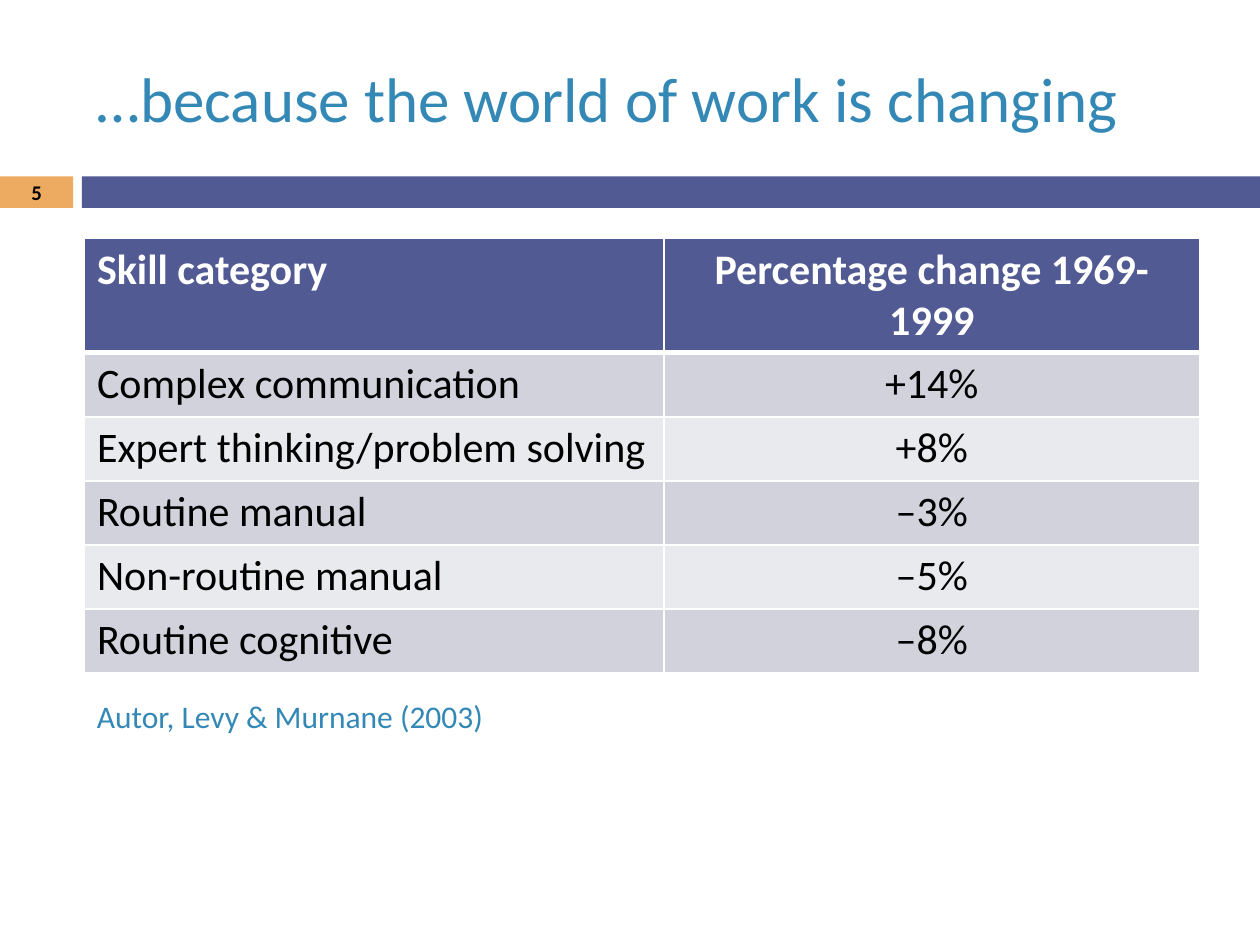
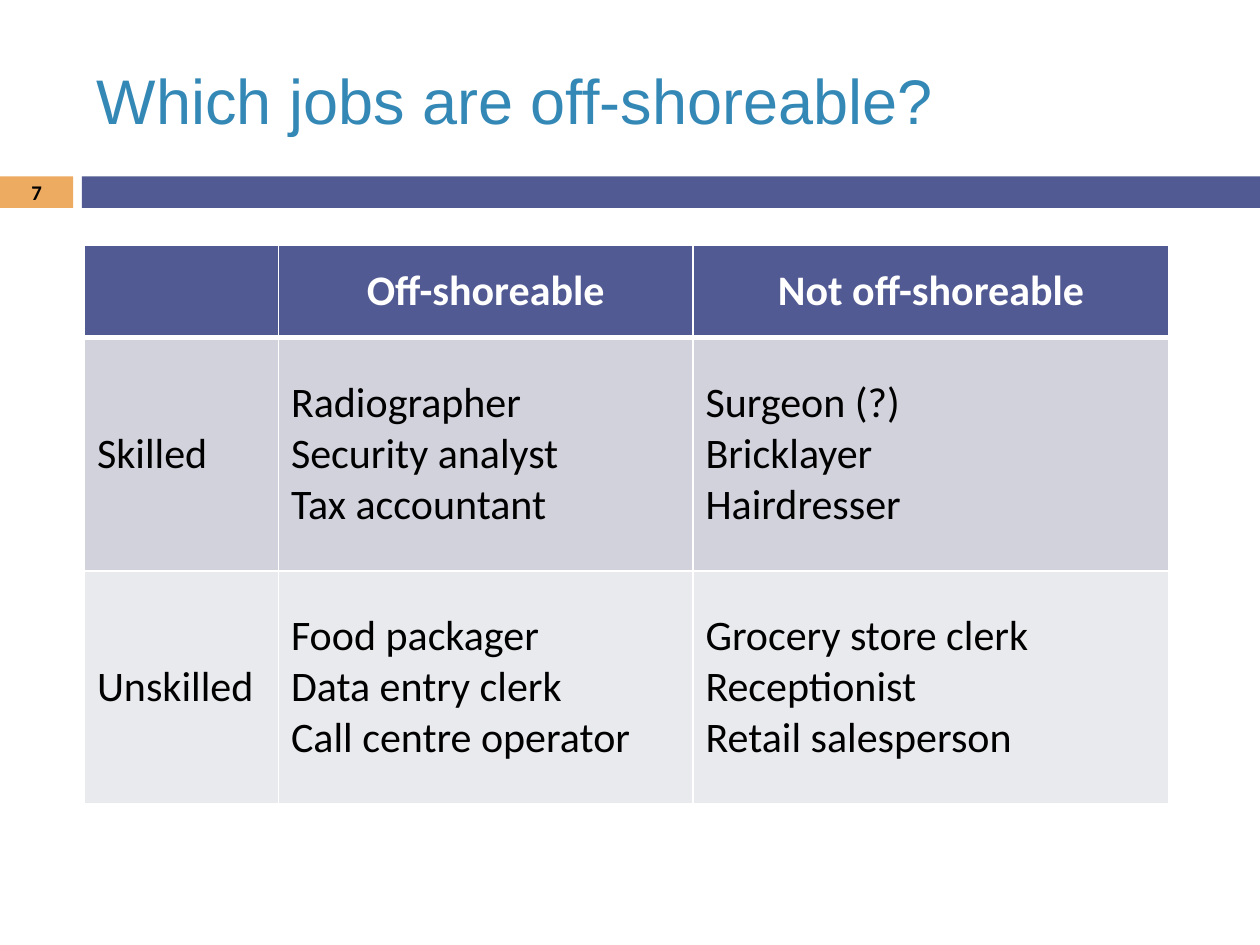
from collections import namedtuple

from lxml import etree
from pptx import Presentation
from pptx import util as u
from pptx.dml.color import RGBColor
from pptx.enum import shapes, text
from pptx.oxml.ns import qn

COLUMNS, ROWS = 100, 75
UNIT = u.Inches(0.1)
INDIGO, ORANGE, BLUE = "525A93", "EDAA61", "3488B6"
WHITE, BLACK = "FFFFFF", "000000"
STRIPES = "D1D2DC", "E9EAEE"
LEFT, CENTER = text.PP_ALIGN.LEFT, text.PP_ALIGN.CENTER
TOP, MIDDLE = text.MSO_ANCHOR.TOP, text.MSO_ANCHOR.MIDDLE

Box = namedtuple("Box", "left top width height")


def inside(box, left, top, width, height):
    return Box(box.left + left, box.top + top, width, height)


def lengths(box):
    return [int(value * UNIT) for value in box]


def color(value):
    return RGBColor.from_string(value)


def style(frame, size, ink, font="Calibri", bold=False, align=LEFT):
    for para in frame.paragraphs:
        para.alignment = align
        for span in para.runs:
            span.font.name = font
            span.font.size = u.Pt(size)
            span.font.bold = bold
            span.font.color.rgb = color(ink)


def add_text(page, box, words, size, ink, anchor=MIDDLE, **look):
    frame = page.shapes.add_textbox(*lengths(box)).text_frame
    frame.word_wrap = True
    frame.vertical_anchor = anchor
    frame.text = words
    style(frame, size, ink, **look)


def add_band(page, box, fill):
    band = page.shapes.add_shape(shapes.MSO_SHAPE.RECTANGLE, *lengths(box))
    band.shadow.inherit = False
    band.fill.solid()
    band.fill.fore_color.rgb = color(fill)
    band.line.fill.background()


def add_heading(page, box, title, number, title_top, title_font):
    badge = inside(box, 0, 14, 5.8, 2.5)
    add_band(page, badge, ORANGE)
    add_band(page, inside(box, 6.5, 14, box.width - 6.5, 2.5), INDIGO)
    add_text(page, inside(box, 6.7, title_top, 89.2, 10.8), title, 36, BLUE,
             font=title_font)
    add_text(page, badge, number, 11.9, BLACK, bold=True, align=CENTER)


def set_borders(cell, top, bottom):
    properties = cell._tc.get_or_add_tcPr()
    for side, width in zip("LRTB", (1, 1, top, bottom)):
        line = etree.SubElement(properties, qn(f"a:ln{side}"), w=str(u.Pt(width)))
        fill = etree.SubElement(line, qn("a:solidFill"))
        etree.SubElement(fill, qn("a:srgbClr"), val=WHITE)


def add_grid(page, box, columns, rows, content, head_aligns, body_aligns, anchor):
    table = page.shapes.add_table(len(rows), len(columns), *lengths(box)).table
    for column, width in zip(table.columns, columns):
        column.width = int(width * UNIT)
    for index, (row, height, words) in enumerate(zip(table.rows, rows, content)):
        head = index == 0
        row.height = int(height * UNIT)
        aligns = head_aligns if head else body_aligns
        for cell, value, align in zip(row.cells, words, aligns):
            set_borders(cell, 3 if index == 1 else 1, 3 if head else 1)
            cell.fill.solid()
            cell.fill.fore_color.rgb = color(INDIGO if head else STRIPES[(index - 1) % 2])
            cell.vertical_anchor = anchor
            cell.text = value
            style(cell.text_frame, 24, WHITE if head else BLACK, bold=head, align=align)


def build_skills(page, box):
    add_heading(page, box, "…because the world of work is changing", "5", 2.3, "Calibri")
    content = [
        ("Skill category", "Percentage change 1969-1999"),
        ("Complex communication", "+14%"),
        ("Expert thinking/problem solving", "+8%"),
        ("Routine manual", "–3%"),
        ("Non-routine manual", "–5%"),
        ("Routine cognitive", "–8%"),
    ]
    columns, rows = (46, 42.5), [9.1] + [5.08] * 5
    aligns = LEFT, CENTER
    add_grid(page, inside(box, 6.7, 18.9, sum(columns), sum(rows)), columns, rows,
             content, aligns, aligns, TOP)
    add_text(page, inside(box, 6.7, 54.8, 35.8, 4), "Autor, Levy & Murnane (2003)",
             18, BLUE, anchor=TOP)


def build_jobs(page, box):
    add_heading(page, box, "Which jobs are off-shoreable?", "7", 2.5, "Arial")
    content = [
        ("", "Off-shoreable", "Not off-shoreable"),
        ("Skilled", "Radiographer\nSecurity analyst\nTax accountant",
         "Surgeon (?)\nBricklayer\nHairdresser"),
        ("Unskilled", "Food packager\nData entry clerk\nCall centre operator",
         "Grocery store clerk\nReceptionist\nRetail salesperson"),
    ]
    columns, rows = (15.4, 32.9, 37.8), (7.3, 18.5, 18.5)
    add_grid(page, inside(box, 6.7, 19.5, sum(columns), sum(rows)), columns, rows,
             content, [CENTER] * 3, [LEFT] * 3, MIDDLE)


def main():
    deck = Presentation()
    deck.slide_width, deck.slide_height = COLUMNS * UNIT, ROWS * UNIT
    for build in (build_skills, build_jobs):
        page = deck.slides.add_slide(deck.slide_layouts[6])
        build(page, Box(0, 0, COLUMNS, ROWS))
    deck.save("out.pptx")


if __name__ == "__main__":
    main()
